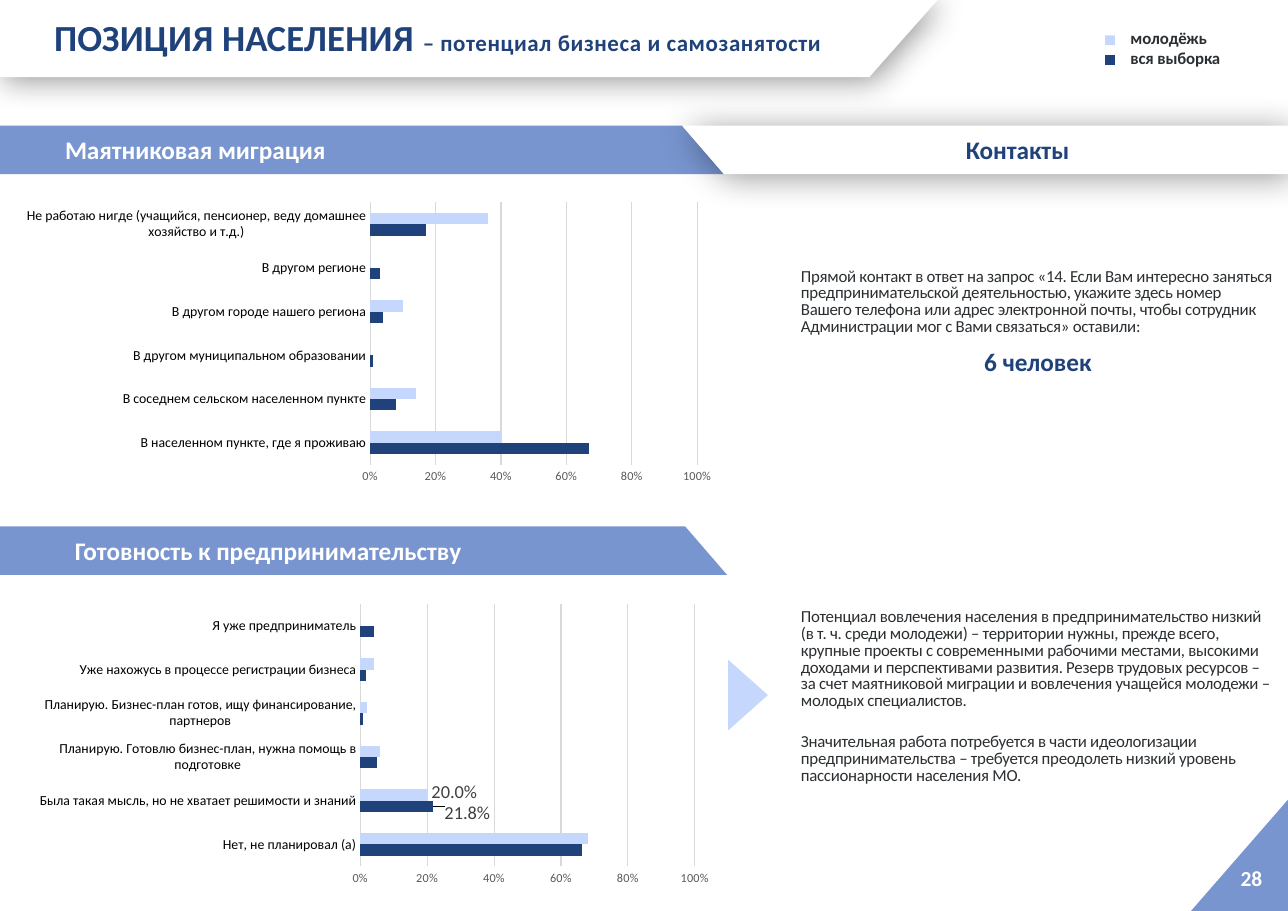
from lxml.etree import SubElement
from pptx import Presentation
from pptx.chart.data import CategoryChartData
from pptx.dml.color import RGBColor
from pptx.enum.chart import XL_CHART_TYPE, XL_LABEL_POSITION, XL_TICK_MARK
from pptx.enum.shapes import MSO_SHAPE
from pptx.enum.text import MSO_ANCHOR, PP_ALIGN
from pptx.oxml import parse_xml
from pptx.oxml.ns import nsdecls, qn
from pptx.util import Inches, Pt

HUES = {
    "navy": "1F427B", "blue": "7895D0", "pale": "C5D7FC", "white": "FFFFFF",
    "ink": "2B2F32", "black": "000000", "grey": "595959", "dark": "404040", "rule": "D9D9D9",
}
WIDE, HIGH = 11.69, 8.27


def hue(name):
    return RGBColor.from_string(HUES[name])


def style(font, size, color, bold=False):
    font.name, font.size, font.bold = "Calibri", Pt(size), bold
    font.color.rgb = hue(color)


def write(para, text, size=11, color="ink", bold=False, gap=0, align=PP_ALIGN.LEFT,
          before=0, line=1.0):
    para.alignment = align
    para.space_before, para.line_spacing = Pt(before), line
    run = para.add_run()
    run.text = text
    style(run.font, size, color, bold)
    run._r.get_or_add_rPr().set("spc", str(round(gap * 100)))


def frame(shape, top=0):
    text = shape.text_frame
    text.word_wrap, text.vertical_anchor = True, MSO_ANCHOR.TOP
    text.margin_left = text.margin_right = text.margin_bottom = 0
    text.margin_top = Inches(top)
    return text


def note(slide, box, top, *paras):
    text = frame(slide.shapes.add_textbox(*map(Inches, box)), top)
    for place, (words, form) in enumerate(paras):
        para = text.add_paragraph() if place else text.paragraphs[0]
        write(para, words, **form)


def paint(shape, color):
    shape.shadow.inherit = False
    shape.fill.solid()
    shape.fill.fore_color.rgb = hue(color)
    shape.line.fill.background()


def poly(slide, box, spots, color, blur=0):
    left, top = box[:2]
    ends = [(Inches(left + x), Inches(top + y)) for x, y in spots]
    form = slide.shapes.build_freeform(*ends[0])
    form.add_line_segments(ends[1:])
    shape = form.convert_to_shape()
    paint(shape, color)
    if blur:
        glow = SubElement(shape._element.spPr.find(qn("a:effectLst")), qn("a:outerShdw"),
                          blurRad=str(Pt(blur)), dist=str(Pt(3)), dir="2700000",
                          algn="tl", rotWithShape="0")
        shade = SubElement(glow, qn("a:srgbClr"), val=HUES["black"])
        SubElement(shade, qn("a:alpha"), val="40000")


def header(slide, box):
    x, y, w, h = box
    poly(slide, box, [(0, 0), (w, 0), (w - 0.62, h), (0, h)], "white", 20)
    title = slide.shapes.title
    title.left, title.top, title.width, title.height = map(Inches, (x + 0.49, y + 0.12, 7.27, 0.42))
    slide.shapes._spTree.append(title._element)
    para = frame(title, 0.01).paragraphs[0]
    for words, size, gap in [("ПОЗИЦИЯ НАСЕЛЕНИЯ ", 24, 0.1), ("– ", 15, 0.3),
                             ("потенциал бизнеса и самозанятости", 15, 0.4)]:
        write(para, words, size=size, color="navy", bold=True, gap=gap, before=1)


def legend(slide, box):
    x, y, w, h = box
    keys = [("молодёжь", "pale"), ("вся выборка", "navy")]
    for row, (words, color) in enumerate(keys):
        spot = (x, y + 0.09 + row * 0.18, 0.09, 0.09)
        paint(slide.shapes.add_shape(MSO_SHAPE.RECTANGLE, *map(Inches, spot)), color)
    form = dict(bold=True, gap=-0.1)
    note(slide, (x + 0.23, y, w - 0.23, h), 0.02, *[(words, form) for words, color in keys])


def band(slide, box, words, inset):
    x, y, w, h = box
    poly(slide, box, [(0, 0), (w - 0.38, 0), (w, h), (0, h)], "blue")
    note(slide, (x + inset, y + 0.06, 4.79, 0.29), 0.02,
         (words, dict(size=16.5, color="white", bold=True, before=1.2)))


def strip(slide, box, words):
    x, y, w, h = box
    poly(slide, box, [(0, 0), (w, 0), (w, h), (0.38, h)], "white", 22)
    note(slide, (x + 1.1, y + 0.06, 3.89, 0.29), 0.02,
         (words, dict(size=16.5, color="navy", bold=True, before=1.2, align=PP_ALIGN.CENTER)))


def layout(sides, inner=False):
    kind = '<c:layoutTarget val="inner"/><c:xMode val="edge"/><c:yMode val="edge"/>' if inner else ""
    body = "".join(f'<c:{key} val="{val}"/>' for key, val in zip("xywh", sides))
    return parse_xml(f'<c:layout {nsdecls("c")}><c:manualLayout>{kind}{body}</c:manualLayout></c:layout>')


def bars(slide, box, rows, plot, marks=()):
    data = CategoryChartData(number_format="0.0%")
    names, whole, youth = zip(*rows)
    data.categories = names
    data.add_series("вся выборка", whole)
    data.add_series("молодёжь", youth)
    chart = slide.shapes.add_chart(XL_CHART_TYPE.BAR_CLUSTERED, *map(Inches, box), data).chart
    chart.has_legend = chart.has_title = False
    style(chart.font, 10, "black")
    group = chart.plots[0]
    group.gap_width, group.overlap, group.vary_by_categories = 182, 0, False
    for series, color in zip(group.series, ("navy", "pale")):
        series.format.fill.solid()
        series.format.fill.fore_color.rgb = hue(color)
        series.invert_if_negative = False
    for series, shift in zip(group.series, marks):
        series.data_labels.show_value = False
        label = series.points[1].data_label
        style(label.font, 12, "dark")
        label.position = XL_LABEL_POSITION.OUTSIDE_END
        series._element.find(".//" + qn("c:dLbl")).insert(1, layout(shift))
    names, scale = chart.category_axis, chart.value_axis
    for axis, size, color in ((names, 9, "black"), (scale, 8, "grey")):
        axis.major_tick_mark = axis.minor_tick_mark = XL_TICK_MARK.NONE
        style(axis.tick_labels.font, size, color)
    scale.minimum_scale, scale.maximum_scale, scale.major_unit = 0, 1, 0.2
    scale.tick_labels.number_format = "0%"
    scale.tick_labels.number_format_is_linked = False
    scale.format.line.fill.background()
    scale.has_major_gridlines = True
    for line in (names.format.line, scale.major_gridlines.format.line):
        line.color.rgb, line.width = hue("rule"), Pt(0.75)
    area = chart._chartSpace.find(".//" + qn("c:plotArea"))
    for old in area.findall(qn("c:layout")):
        area.remove(old)
    area.insert(0, layout(plot, True))


def corner(slide, box, words):
    x, y, w, h = box
    poly(slide, box, [(w, 0), (0, h), (w, h)], "blue")
    note(slide, (x + 0.45, y + 0.54, w - 0.45, h - 0.54), 0.05,
         (words, dict(size=14, color="white", bold=True, before=2.1)))


def main():
    deck = Presentation()
    deck.slide_width, deck.slide_height = Inches(WIDE), Inches(HIGH)
    slide = deck.slides.add_slide(deck.slide_layouts[5])
    band(slide, (0, 1.14, 6.57, 0.44), "Маятниковая миграция", 0.59)
    strip(slide, (6.19, 1.14, 5.5, 0.44), "Контакты")
    band(slide, (0, 4.78, 6.6, 0.44), "Готовность к предпринимательству", 0.68)
    header(slide, (0, 0, 8.51, 0.7))
    legend(slide, (10.03, 0.23, 1.25, 0.39))
    bars(slide, (0.17, 5.29, 6.34, 2.94), [
        ("Нет, не планировал (а)", 0.664, 0.68),
        ("Была такая мысль, но не хватает решимости и знаний", 0.218, 0.2),
        ("Планирую. Готовлю бизнес-план, нужна помощь в подготовке", 0.05, 0.06),
        ("Планирую. Бизнес-план готов, ищу финансирование, партнеров", 0.008, 0.02),
        ("Уже нахожусь в процессе регистрации бизнеса", 0.017, 0.04),
        ("Я уже предприниматель", 0.042, 0),
    ], (0.489, 0.066, 0.479, 0.81), [(0.01, 0.02), (0, -0.01)])
    bars(slide, (0.17, 1.67, 6.51, 2.94), [
        ("В населенном пункте, где я проживаю", 0.67, 0.4),
        ("В соседнем сельском населенном пункте", 0.08, 0.14),
        ("В другом муниципальном образовании", 0.01, 0),
        ("В другом городе нашего региона", 0.04, 0.1),
        ("В другом регионе", 0.03, 0),
        ("Не работаю нигде (учащийся, пенсионер, веду домашнее хозяйство и т.д.)", 0.17, 0.36),
    ], (0.49, 0.057, 0.456, 0.81))
    poly(slide, (6.61, 5.99), [(0, 0), (0.36, 0.32), (0, 0.64)], "pale")
    plain = dict(gap=-0.2, before=2.4, line=Pt(11))
    apart = plain | dict(before=15.8)
    note(slide, (7.27, 2.41, 4.3, 1.04), 0.03,
         ("Прямой контакт в ответ на запрос «14. Если Вам интересно заняться предпринимательской "
          "деятельностью, укажите здесь номер Вашего телефона или адрес электронной почты, чтобы "
          "сотрудник Администрации мог с Вами связаться» оставили:", plain),
         ("6 человек", apart | dict(size=16.5, color="navy", bold=True, gap=0,
                                    align=PP_ALIGN.CENTER)))
    note(slide, (7.27, 5.5, 4.3, 1.63), 0.03,
         ("Потенциал вовлечения населения в предпринимательство низкий (в т. ч. среди молодежи) – "
          "территории нужны, прежде всего, крупные проекты с современными рабочими местами, высокими "
          "доходами и перспективами развития. Резерв трудовых ресурсов – за счет маятниковой миграции "
          "и вовлечения учащейся молодежи – молодых специалистов.", plain),
         ("Значительная работа потребуется в части идеологизации предпринимательства – требуется "
          "преодолеть низкий уровень пассионарности населения МО.", apart))
    corner(slide, (10.81, 7.26, 0.88, 1.01), "28")
    deck.save("out.pptx")


if __name__ == "__main__":
    main()
